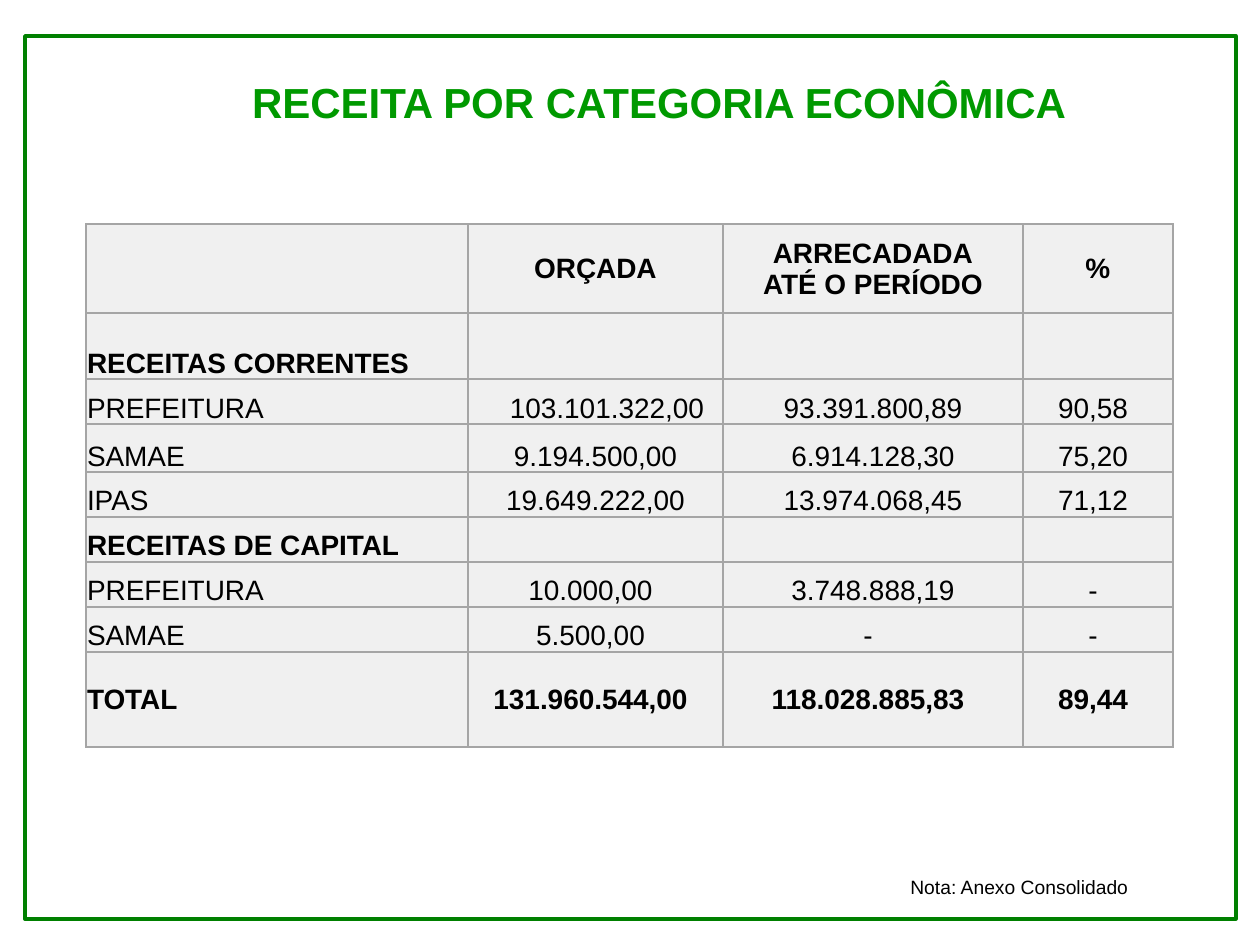
from lxml.etree import SubElement
from pptx import Presentation
from pptx.dml.color import RGBColor
from pptx.enum.shapes import MSO_SHAPE
from pptx.enum.text import MSO_ANCHOR, PP_ALIGN
from pptx.oxml.ns import qn
from pptx.util import Pt

PX = 7257  # EMU per pixel, 126 pixels to the inch


def format_text(frame, size, color, bold=False, align=PP_ALIGN.LEFT):
    for paragraph in frame.paragraphs:
        paragraph.alignment = align
        for run in paragraph.runs:
            run.font.name = "Arial"
            run.font.size = Pt(size)
            run.font.bold = bold
            run.font.color.rgb = RGBColor.from_string(color)


def add_borders(cell, color):
    properties = cell._tc.get_or_add_tcPr()
    for side in ("lnL", "lnR", "lnT", "lnB"):
        line = SubElement(properties, qn(f"a:{side}"), w=str(Pt(1)))
        fill = SubElement(line, qn("a:solidFill"))
        SubElement(fill, qn("a:srgbClr"), val=color)


prs = Presentation()
prs.slide_width = 1260 * PX
prs.slide_height = 945 * PX
slide = prs.slides.add_slide(prs.slide_layouts[5])

title = slide.shapes.title
title.left, title.top, title.width, title.height = 87 * PX, 76 * PX, 1086 * PX, 114 * PX
title.text_frame.text = "RECEITA POR CATEGORIA ECONÔMICA"
title.text_frame.word_wrap = True
title.text_frame.vertical_anchor = MSO_ANCHOR.TOP
title.text_frame.margin_left = 71 * PX
title.text_frame.paragraphs[0].line_spacing = 0.9
format_text(title.text_frame, 24, "009900", True, PP_ALIGN.CENTER)

border = slide.shapes.add_shape(MSO_SHAPE.RECTANGLE, 25 * PX, 36 * PX, 1211 * PX, 883 * PX)
border.shadow.inherit = False
border.fill.background()
border.line.color.rgb = RGBColor.from_string("008000")
border.line.width = Pt(2)

revenue = [
    ("", "ORÇADA", "ARRECADADA\nATÉ O PERÍODO", "%"),
    ("RECEITAS CORRENTES", "", "", ""),
    ("PREFEITURA", "103.101.322,00", "93.391.800,89", "90,58"),
    ("SAMAE", "9.194.500,00", "6.914.128,30", "75,20"),
    ("IPAS", "19.649.222,00", "13.974.068,45", "71,12"),
    ("RECEITAS DE CAPITAL", "", "", ""),
    ("PREFEITURA", "10.000,00", "3.748.888,19", "-"),
    ("SAMAE", "5.500,00", "-", "-"),
    ("TOTAL", "131.960.544,00", "118.028.885,83", "89,44"),
]
column_widths = [382, 255, 300, 150]
row_heights = [89, 66, 45, 48, 45, 45, 45, 45, 95]
bold_rows = {0, 1, 5, 8}
middle_rows = {0, 8}
# Cells whose wider right margin moves the centred figure to the left
shifted_cells = {(6, 1), (7, 1), (7, 2), (8, 1), (8, 2)} | {(row, 3) for row in range(1, 9)}

table = slide.shapes.add_table(
    len(revenue), len(column_widths), 86 * PX, 224 * PX,
    sum(column_widths) * PX, sum(row_heights) * PX).table
table.first_row = False
table.horz_banding = False
for column, width in zip(table.columns, column_widths):
    column.width = width * PX
for row, height in zip(table.rows, row_heights):
    row.height = height * PX

for r, values in enumerate(revenue):
    for c, value in enumerate(values):
        cell = table.cell(r, c)
        add_borders(cell, "A5A5A5")
        cell.fill.solid()
        cell.fill.fore_color.rgb = RGBColor.from_string("F0F0F0")
        cell.margin_left = cell.margin_top = PX
        cell.margin_right = (11 if c == 0 or (r, c) in shifted_cells else 1) * PX
        cell.margin_bottom = 0
        cell.vertical_anchor = MSO_ANCHOR.MIDDLE if r in middle_rows else MSO_ANCHOR.BOTTOM
        cell.text_frame.text = value
        format_text(cell.text_frame, 16, "000000", r in bold_rows,
                    PP_ALIGN.CENTER if c else PP_ALIGN.LEFT)

table.cell(1, 0).text_frame.paragraphs[0].line_spacing = 1.5
table.cell(2, 1).margin_left = 24 * PX

note = slide.shapes.add_textbox(898 * PX, 869 * PX, 328 * PX, 37 * PX)
note.text_frame.word_wrap = True
note.text_frame.text = "Nota: Anexo Consolidado"
format_text(note.text_frame, 11, "000000")

prs.save("out.pptx")
